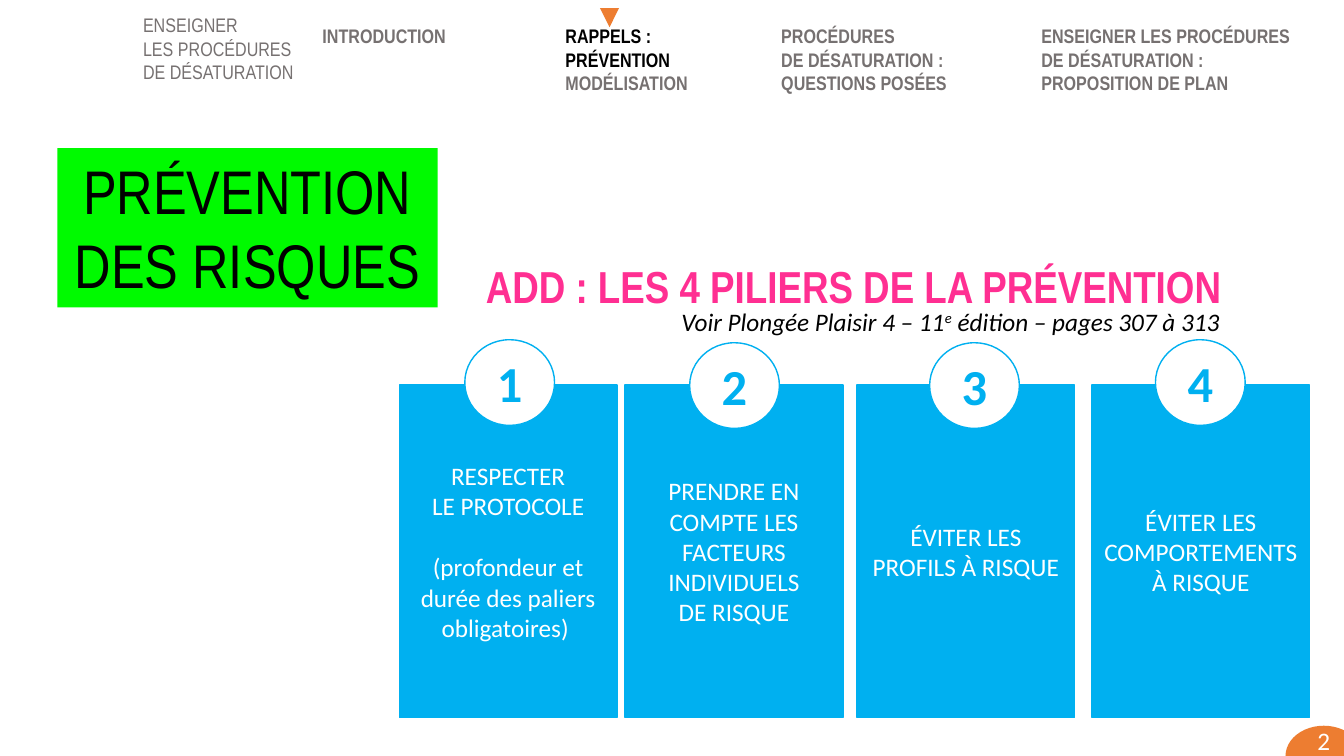
from pptx import Presentation
from pptx.dml.color import RGBColor
from pptx.enum.shapes import MSO_SHAPE
from pptx.enum.text import MSO_ANCHOR, MSO_AUTO_SIZE, PP_ALIGN
from pptx.util import Inches, Pt

RECT, OVAL, TRIANGLE = MSO_SHAPE.RECTANGLE, MSO_SHAPE.OVAL, MSO_SHAPE.ISOSCELES_TRIANGLE
LEFT, CENTER = PP_ALIGN.LEFT, PP_ALIGN.CENTER
TOP, MIDDLE = MSO_ANCHOR.TOP, MSO_ANCHOR.MIDDLE
GROW = MSO_AUTO_SIZE.SHAPE_TO_FIT_TEXT

THEME = {
    "green": "00FA00", "pink": "FF2F92", "blue": "00B0F0", "orange": "ED7D31",
    "grey": "767171", "black": "000000", "white": "FFFFFF",
    "narrow": "Arial Narrow", "body": "Calibri",
    "title": 44, "heading": 32, "number": 36, "text": 18, "nav": 14,
}


def style(font, size, color, **extra):
    return {"name": THEME[font], "size": Pt(THEME[size]), "color": THEME[color], **extra}


NAV = style("narrow", "nav", "grey", bold=True)
NAV_PLAIN = style("narrow", "nav", "grey")
NAV_ACTIVE = style("narrow", "nav", "black", bold=True)
TITLE = style("narrow", "title", "black")
HEADING = style("narrow", "heading", "pink", bold=True)
REFERENCE = style("body", "text", "black", italic=True)
PILLAR = style("body", "text", "white")
NUMBER = style("body", "number", "blue", bold=True)

NAV_ITEMS = [
    ((1.32, 0.08, 1.72, 0.81), [("ENSEIGNER", NAV_PLAIN), ("LES PROCÉDURES", NAV_PLAIN),
                                ("DE DÉSATURATION", NAV_PLAIN)]),
    ((3.1, 0.19, 1.68, 0.34), [("INTRODUCTION", NAV)]),
    ((5.51, 0.19, 1.42, 0.81), [("RAPPELS :", NAV_ACTIVE), ("PRÉVENTION", NAV_ACTIVE),
                                ("MODÉLISATION", NAV)]),
    ((7.65, 0.19, 1.85, 0.81), [("PROCÉDURES", NAV), ("DE DÉSATURATION :", NAV),
                                ("QUESTIONS POSÉES", NAV)]),
    ((10.23, 0.19, 2.68, 0.81), [("ENSEIGNER LES PROCÉDURES", NAV), ("DE DÉSATURATION :", NAV),
                                 ("PROPOSITION DE PLAN", NAV)]),
]
TITLE_LINES = ["PRÉVENTION", "DES RISQUES"]
HEADING_TEXT = "ADD : LES 4 PILIERS DE LA PRÉVENTION"
REFERENCE_PARTS = ["Voir Plongée Plaisir 4 – 11", "e", " édition – pages 307 à 313"]
PILLARS = [
    (3.96, 4.61, 3.37, ["RESPECTER", "LE PROTOCOLE",
                        "(profondeur et durée des paliers obligatoires) "]),
    (6.2, 6.84, 3.4, ["PRENDRE EN COMPTE LES FACTEURS INDIVIDUELS", "DE RISQUE"]),
    (8.5, 9.22, 3.4, ["ÉVITER LES PROFILS À RISQUE"]),
    (10.83, 11.46, 3.37, ["ÉVITER LES COMPORTEMENTS À RISQUE"]),
]
PAGE_NUMBER = "2"
PILLAR_TOP, PILLAR_WIDTH, PILLAR_HEIGHT = 3.82, 2.16, 3.3
CIRCLE_WIDTH, CIRCLE_HEIGHT = 0.89, 0.85

deck = Presentation()
deck.slide_width, deck.slide_height = Inches(13.33), Inches(7.5)
slide = deck.slides.add_slide(deck.slide_layouts[6])


def add_run(paragraph, text, look):
    run = paragraph.add_run()
    run.text = text
    for attribute, value in look.items():
        if attribute == "color":
            run.font.color.rgb = RGBColor.from_string(value)
        else:
            setattr(run.font, attribute, value)
    return run


def write(holder, lines, align=LEFT, anchor=TOP, wrap=True):
    frame = holder.text_frame
    frame.word_wrap, frame.vertical_anchor = wrap, anchor
    for index, (text, look) in enumerate(lines):
        paragraph = frame.add_paragraph() if index else frame.paragraphs[0]
        paragraph.alignment = align
        add_run(paragraph, text, look)
    return frame


def add_box(box):
    return slide.shapes.add_textbox(*map(Inches, box))


def add_figure(kind, box, fill, line=None):
    figure = slide.shapes.add_shape(kind, *map(Inches, box))
    figure.shadow.inherit = False
    figure.fill.solid()
    figure.fill.fore_color.rgb = RGBColor.from_string(THEME[fill])
    if line:
        figure.line.color.rgb = RGBColor.from_string(THEME[line])
        figure.line.width = Pt(1)
    else:
        figure.line.fill.background()
    return figure


title = add_figure(RECT, (0.57, 1.47, 3.77, 1.58), "green")
write(title, [(text, TITLE) for text in TITLE_LINES], CENTER)

heading = add_box((4.72, 2.52, 7.57, 0.64))
write(heading, [(HEADING_TEXT, HEADING)], wrap=False).auto_size = GROW

for number, (left, circle_left, circle_top, lines) in enumerate(PILLARS, 1):
    pillar = add_figure(RECT, (left, PILLAR_TOP, PILLAR_WIDTH, PILLAR_HEIGHT), "blue", "blue")
    frame = write(pillar, [(text, PILLAR) for text in lines], CENTER, MIDDLE)
    if lines[-1].startswith("("):
        frame.paragraphs[-1].space_before = Pt(22)
    circle = add_figure(OVAL, (circle_left, circle_top, CIRCLE_WIDTH, CIRCLE_HEIGHT),
                        "white", "blue")
    write(circle, [(str(number), NUMBER)], CENTER, MIDDLE)

page_badge = add_figure(OVAL, (12.75, 7.2, 0.76, 0.6), "orange")
badge_frame = write(page_badge, [(PAGE_NUMBER, PILLAR)], CENTER, MIDDLE)
badge_frame.margin_top, badge_frame.margin_bottom = 0, Inches(0.3)

for box, lines in NAV_ITEMS:
    write(add_box(box), lines, wrap=len(lines) == 1).auto_size = GROW

marker = add_figure(TRIANGLE, (5.95, 0.08, 0.19, 0.19), "orange")
marker.rotation = 180

before, ordinal, after = REFERENCE_PARTS
reference = write(add_box((6.66, 2.99, 5.61, 0.4)), [(before, REFERENCE)], wrap=False)
reference.auto_size = GROW
raised = add_run(reference.paragraphs[0], ordinal, REFERENCE)
raised.font._element.set("baseline", "30000")
add_run(reference.paragraphs[0], after, REFERENCE)

deck.save("out.pptx")
